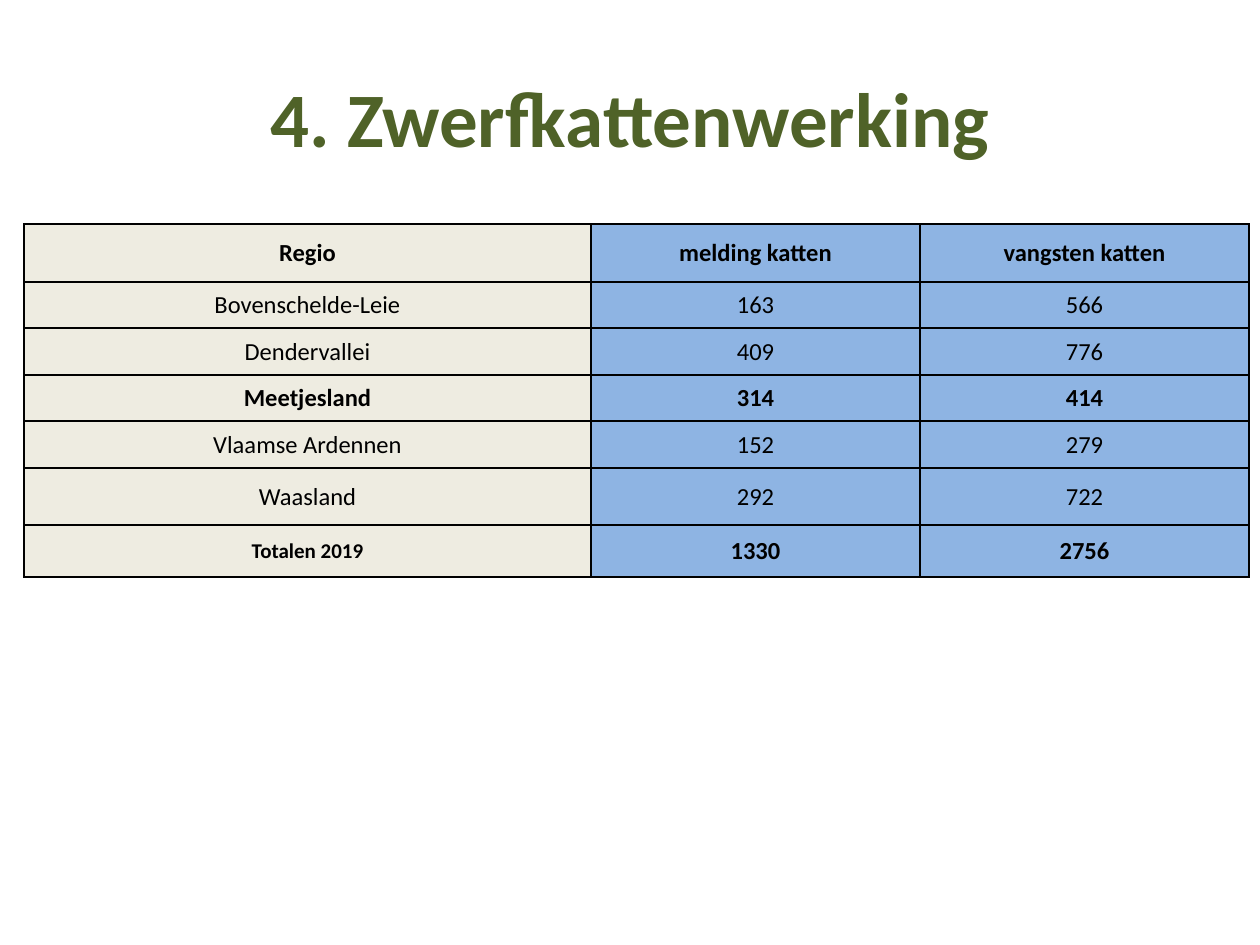
"""Build the slide with the stray cat figures per region."""
from dataclasses import dataclass

from lxml import etree
from pptx import Presentation
from pptx.dml.color import RGBColor
from pptx.enum.text import MSO_ANCHOR, PP_ALIGN
from pptx.oxml.ns import qn
from pptx.util import Pt

MIDDLE = MSO_ANCHOR.MIDDLE
CENTER = PP_ALIGN.CENTER

TITLE = "4. Zwerfkattenwerking"
ROWS = [
    ("Regio", "melding katten", "vangsten katten"),
    ("Bovenschelde-Leie", "163", "566"),
    ("Dendervallei", "409", "776"),
    ("Meetjesland", "314", "414"),
    ("Vlaamse Ardennen", "152", "279"),
    ("Waasland", "292", "722"),
    ("Totalen 2019", "1330", "2756"),
]
BOLD = ("Regio", "Meetjesland", "Totalen 2019")
SMALL = "Totalen 2019"

PAGE = (1260, 945)
TITLE_BOX = (63, 38, 1134, 158)
ORIGIN = (24, 224)
WIDTHS = (567, 329, 329)
HEIGHTS = (58, 46, 47, 46, 47, 57, 52)
SIDES = ("a:lnL", "a:lnR", "a:lnT", "a:lnB")


@dataclass(frozen=True)
class Theme:
    font: str = "Calibri"
    title: str = "4F6228"
    text: str = "000000"
    line: str = "000000"
    region: str = "EEECE1"
    count: str = "8EB4E3"
    title_size: int = 44
    size: int = 14
    small: int = 12
    border: int = 1


THEME = Theme()


def px(n):
    return round(n * 914400 / 126)


def style(frame, size, color, bold):
    para = frame.paragraphs[0]
    para.alignment = CENTER
    font = para.runs[0].font
    font.name = THEME.font
    font.size = Pt(size)
    font.bold = bold
    font.color.rgb = RGBColor.from_string(color)


def add_borders(cell):
    props = cell._tc.get_or_add_tcPr()
    for spot, side in enumerate(SIDES):
        line = etree.Element(qn(side), w=str(Pt(THEME.border)))
        fill = etree.SubElement(line, qn("a:solidFill"))
        etree.SubElement(fill, qn("a:srgbClr"), val=THEME.line)
        props.insert(spot, line)


def add_title(slide):
    frame = slide.shapes.add_textbox(*map(px, TITLE_BOX)).text_frame
    frame.word_wrap = True
    frame.vertical_anchor = MIDDLE
    frame.text = TITLE
    style(frame, THEME.title_size, THEME.title, True)


def fill_cell(cell, text, col, bold):
    cell.text = text
    cell.vertical_anchor = MIDDLE
    cell.margin_left = cell.margin_right = cell.margin_top = px(1)
    cell.margin_bottom = 0
    cell.fill.solid()
    color = THEME.count if col else THEME.region
    cell.fill.fore_color.rgb = RGBColor.from_string(color)
    size = THEME.small if text == SMALL else THEME.size
    style(cell.text_frame, size, THEME.text, bold)
    add_borders(cell)


def add_grid(slide):
    area = map(px, (*ORIGIN, sum(WIDTHS), sum(HEIGHTS)))
    table = slide.shapes.add_table(len(ROWS), len(WIDTHS), *area).table
    for col, width in zip(table.columns, WIDTHS):
        col.width = px(width)
    for row, height in zip(table.rows, HEIGHTS):
        row.height = px(height)
    for r, row in enumerate(ROWS):
        for c, text in enumerate(row):
            fill_cell(table.cell(r, c), text, c, row[0] in BOLD)


def main():
    deck = Presentation()
    deck.slide_width, deck.slide_height = map(px, PAGE)
    slide = deck.slides.add_slide(deck.slide_layouts[6])
    add_title(slide)
    add_grid(slide)
    deck.save("out.pptx")


if __name__ == "__main__":
    main()
